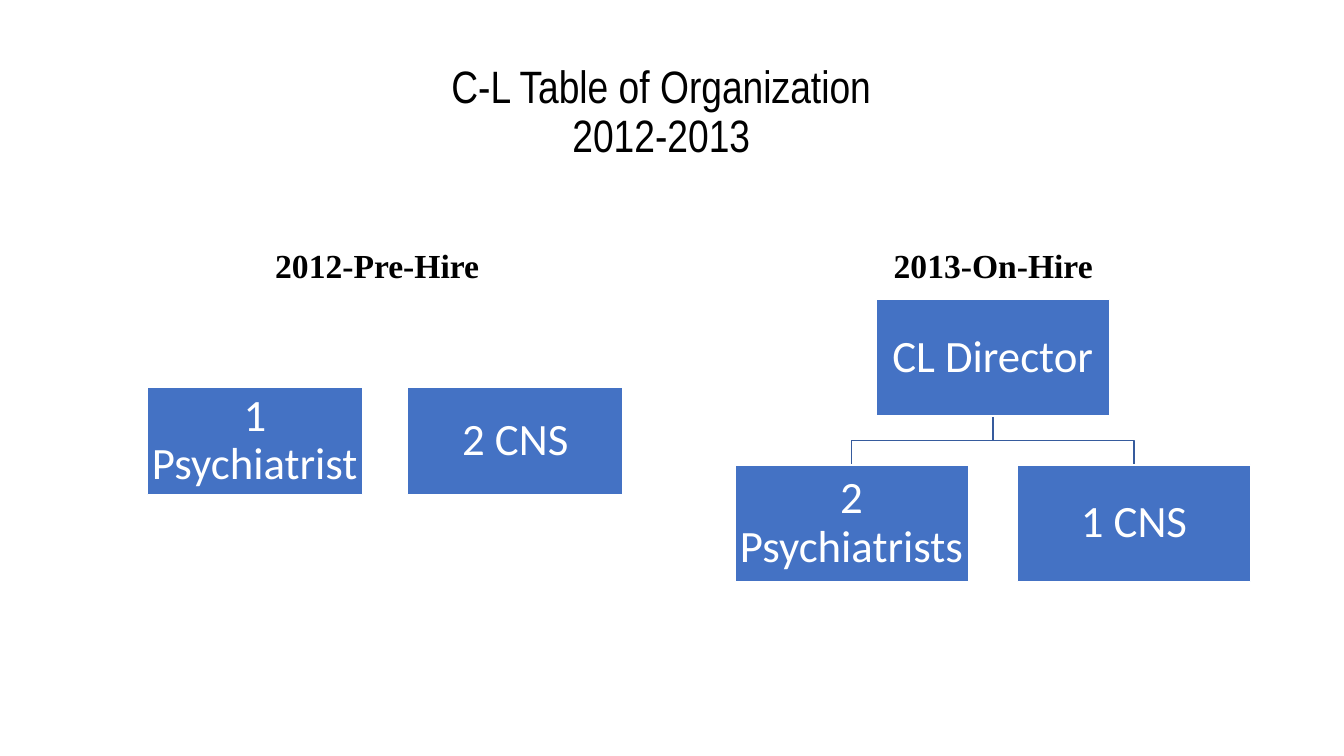
from pptx import Presentation
from pptx.dml.color import RGBColor
from pptx.enum.shapes import MSO_SHAPE
from pptx.enum.text import MSO_ANCHOR, MSO_AUTO_SIZE, PP_ALIGN
from pptx.util import Cm, Pt

RECTANGLE = MSO_SHAPE.RECTANGLE
MIDDLE, BOTTOM = MSO_ANCHOR.MIDDLE, MSO_ANCHOR.BOTTOM
CENTER = PP_ALIGN.CENTER
NO_AUTOFIT = MSO_AUTO_SIZE.NONE

COMPARISON_LAYOUT = 5 - 1
BLUE, DARK_BLUE, WHITE, BLACK = "4472C4", "365B9D", "FFFFFF", "000000"
TITLE_FONT = {"name": "Arial Narrow", "size": Pt(32.4), "bold": False}
HEADING_FONT = {"name": "Times New Roman", "size": Pt(24), "bold": True}
ROLE_FONT = {"name": "Calibri", "size": Pt(32), "bold": False}
ROLE_MARGINS = dict.fromkeys(
    ("margin_left", "margin_top", "margin_right", "margin_bottom"), Cm(0.05))

# Proportions of the organization charts
GAP_TO_WIDTH = 0.21
HEIGHT_TO_WIDTH = 0.5


def color(hex_string):
    return RGBColor.from_string(hex_string)


def apply(target, values):
    for name, value in values.items():
        setattr(target, name, value)


def write(holder, text, font, font_color, anchor, space_before=0):
    frame = holder.text_frame
    apply(frame, {"text": text, "word_wrap": True,
                  "auto_size": NO_AUTOFIT, "vertical_anchor": anchor})
    for paragraph in frame.paragraphs:
        apply(paragraph, {"alignment": CENTER, "line_spacing": 0.9,
                          "space_before": Pt(space_before)})
        for run in paragraph.runs:
            apply(run.font, font)
            run.font.color.rgb = color(font_color)


def place(holder, left, top, width, height):
    apply(holder, {"left": Cm(left), "top": Cm(top),
                   "width": Cm(width), "height": Cm(height)})


def add_title(slide, box):
    place(slide.shapes.title, *box)
    write(slide.shapes.title, "C-L Table of Organization\v2012-2013",
          TITLE_FONT, BLACK, MIDDLE)


def add_heading(heading, text, box):
    place(heading, *box)
    write(heading, text, HEADING_FONT, BLACK, BOTTOM, space_before=10)


def add_role(slide, role, left, top, width):
    box = slide.shapes.add_shape(RECTANGLE, Cm(left), Cm(top), Cm(width),
                                 Cm(width * HEIGHT_TO_WIDTH))
    box.shadow.inherit = False
    box.fill.solid()
    box.fill.fore_color.rgb = color(BLUE)
    box.line.color.rgb = color(WHITE)
    box.line.width = Pt(1)
    apply(box.text_frame, ROLE_MARGINS)
    write(box, role, ROLE_FONT, WHITE, MIDDLE)


def add_branch(slide, start_x, start_y, end_x, end_y):
    """Draw the line that goes down, across and down to a report."""
    middle_y = (start_y + end_y) / 2
    outline = slide.shapes.build_freeform(Cm(start_x), Cm(start_y))
    outline.add_line_segments(
        [(Cm(start_x), Cm(middle_y)), (Cm(end_x), Cm(middle_y)),
         (Cm(end_x), Cm(end_y))], close=False)
    branch = outline.convert_to_shape()
    branch.shadow.inherit = False
    branch.fill.background()
    branch.line.color.rgb = color(DARK_BLUE)
    branch.line.width = Pt(1)


def add_organization(slide, reports, left, top, width, director=None):
    """Place a row of reports, under a director if there is one."""
    count = len(reports)
    role_width = width / (count + (count - 1) * GAP_TO_WIDTH)
    step = role_width * (1 + GAP_TO_WIDTH)
    lefts = [left + index * step for index in range(count)]
    if director:
        center = left + width / 2
        director_bottom = top + role_width * HEIGHT_TO_WIDTH
        director_top, top = top, director_bottom + role_width * GAP_TO_WIDTH
        for report_left in lefts:
            add_branch(slide, center, director_bottom,
                       report_left + role_width / 2, top)
        add_role(slide, director, center - role_width / 2, director_top,
                 role_width)
    for report, report_left in zip(reports, lefts):
        add_role(slide, report, report_left, top, role_width)


def add_comparison_slide(presentation):
    slide = presentation.slides.add_slide(
        presentation.slide_layouts[COMPARISON_LAYOUT])
    _, before_heading, before_body, after_heading, after_body = slide.placeholders
    for unused in (before_body, after_body):
        unused.element.getparent().remove(unused.element)
    add_title(slide, (2.06, 1.02, 29.21, 3.68))
    add_heading(before_heading, "2012-Pre-Hire", (2.34, 5.03, 14.33, 2.29))
    add_organization(slide, ["1 Psychiatrist", "2 CNS"], 3.71, 9.75, 11.99)
    add_heading(after_heading, "2013-On-Hire", (17.83, 5.03, 14.4, 2.29))
    add_organization(slide, ["2 Psychiatrists", "1 CNS"], 18.52, 7.54, 13,
                     director="CL Director")


def main():
    presentation = Presentation()
    apply(presentation, {"slide_width": Cm(33.87), "slide_height": Cm(19.05)})
    add_comparison_slide(presentation)
    presentation.save("out.pptx")


if __name__ == "__main__":
    main()
